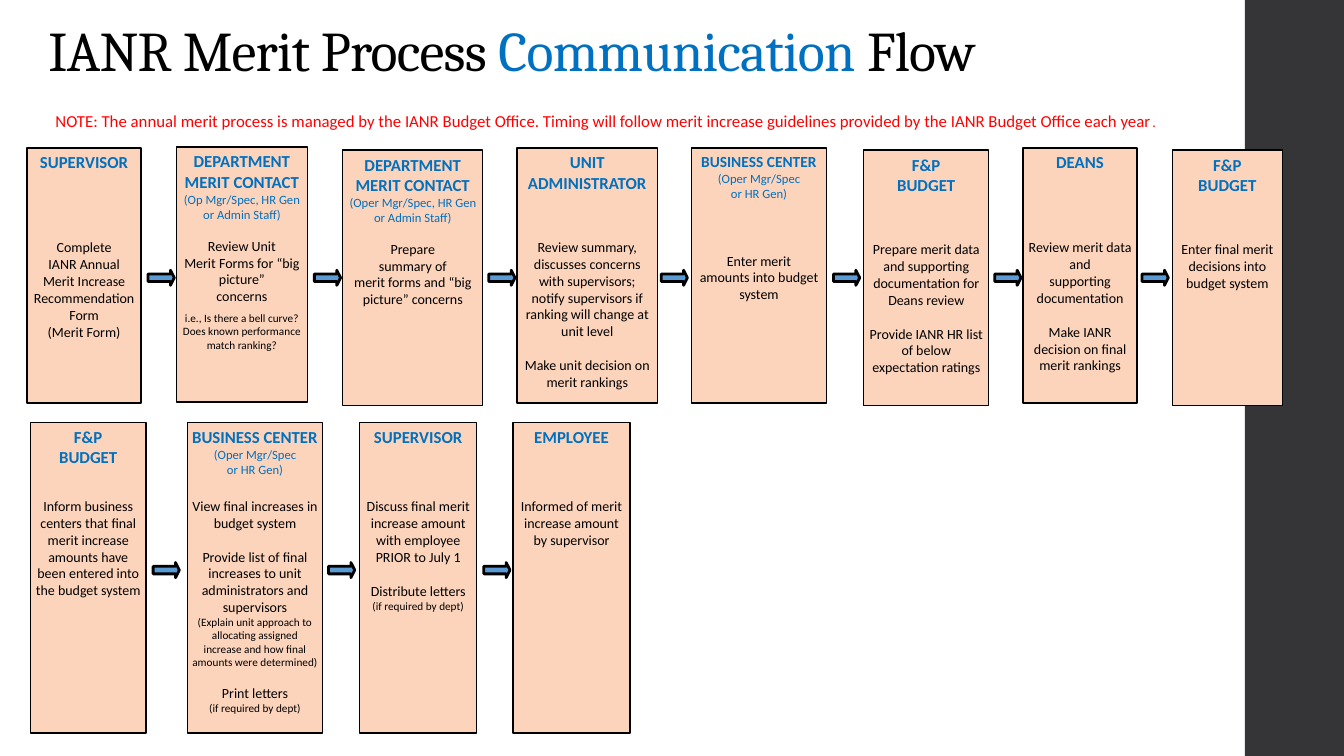
from dataclasses import dataclass
from typing import Optional

from pptx import Presentation
from pptx import util as u
from pptx.dml import color
from pptx.enum import shapes, text

BLACK, BLUE, RED = "000000", "0070C0", "FF0000"
PEACH, ARROW_BLUE, CHARCOAL = "FCD4BC", "5B9BD5", "353537"
INSET = 2.88
ARROW_WIDTH, ARROW_HEIGHT = 18.7, 10.8


@dataclass(frozen=True)
class Style:
    size: float
    colour: str
    bold: bool = False


ROLE = Style(12, BLUE, True)
SMALL_ROLE = Style(11, BLUE, True)
STAFF = Style(9, BLUE)
STEP = Style(10, BLACK)
REMARK = Style(8, BLACK)


@dataclass(frozen=True)
class Line:
    """One paragraph; gap is the space before it, staff a lighter ending."""
    text: str
    style: Style = STEP
    gap: float = 0
    staff: str = ""


@dataclass
class Card:
    left: float
    top: float
    width: float
    lines: list[Line]
    arrow_left: Optional[float] = None


@dataclass
class Row:
    height: float
    arrow_top: float
    cards: list[Card]


BUDGET = [Line("F&P", ROLE), Line("BUDGET", ROLE)]
OPERATIONS = "(Oper Mgr/Spec"
HR = Line("or HR Gen)", STAFF)

ROWS = [
    Row(182.2, 193, [
        Card(19.4, 105.8, 81.4, [
            Line("SUPERVISOR", ROLE),
            Line("Complete", gap=47.6),
            Line("IANR Annual Merit Increase"),
            Line("Recommendation Form"),
            Line("(Merit Form)")], 105.8),
        Card(126, 105.1, 93.6, [
            Line("DEPARTMENT MERIT CONTACT", ROLE),
            Line("(Op Mgr/Spec, HR Gen or Admin Staff)", STAFF),
            Line("Review Unit", gap=11),
            Line("Merit Forms for “big picture”"),
            Line("concerns"),
            Line("i.e., Is there a bell curve? Does known performance match ranking?",
                 REMARK, 4.9)], 224.6),
        Card(244.8, 107.3, 100.1, [
            Line("DEPARTMENT MERIT CONTACT", ROLE),
            Line("(Oper Mgr/Spec, HR Gen or Admin Staff)", STAFF),
            Line("Prepare", gap=11),
            Line("summary of"),
            Line("merit forms and “big picture” concerns")], 349.2),
        Card(369.4, 105.8, 100.1, [
            Line("UNIT", ROLE),
            Line("ADMINISTRATOR", ROLE),
            Line("Review summary,", gap=33),
            Line("discusses concerns with supervisors; notify supervisors if "
                 "ranking will change at unit level"),
            Line("Make unit decision on merit rankings", gap=12.2)], 472.3),
        Card(493.9, 105.8, 96.5, [
            Line("BUSINESS CENTER ", SMALL_ROLE, staff=OPERATIONS),
            HR,
            Line("Enter merit", gap=36.6),
            Line("amounts into budget system")], 595.4),
        Card(617, 107.3, 89.3, BUDGET + [
            Line("Prepare merit data and supporting", gap=33),
            Line("documentation for Deans review"),
            Line("Provide IANR HR list of below expectation ratings", gap=12.2)], 710.6),
        Card(730.8, 105.8, 81.4, [
            Line("DEANS", ROLE),
            Line("Review merit data and", gap=47.6),
            Line("supporting documentation"),
            Line("Make IANR decision on final merit rankings", gap=12.2)], 815.8),
        Card(837.4, 107.3, 78.5, BUDGET + [
            Line("Enter final merit decisions into budget system", gap=33)]),
    ]),
    Row(221.8, 401.8, [
        Card(21.6, 301.7, 82.8, BUDGET + [
            Line("Inform business centers that final merit increase amounts have "
                 "been entered into the budget system", gap=22)], 109.4),
        Card(133.9, 301.7, 96.5, [
            Line("BUSINESS CENTER ", ROLE, staff=OPERATIONS),
            HR,
            Line("View final increases in budget system", gap=14.6),
            Line("Provide list of final", gap=12.2),
            Line("increases to unit"),
            Line("administrators and"),
            Line("supervisors"),
            Line("(Explain unit approach to allocating assigned", REMARK),
            Line("increase and how final amounts were determined)", REMARK),
            Line("Print letters", gap=11),
            Line("(if required by dept)", REMARK)], 234.7),
        Card(257, 301.7, 83.5, [
            Line("SUPERVISOR", ROLE),
            Line("Discuss final merit increase amount", gap=36.6),
            Line("with employee"),
            Line("PRIOR to July 1"),
            Line("Distribute letters", gap=12.2),
            Line("(if required by dept)", REMARK)], 345.6),
        Card(366.5, 301.7, 83.5, [
            Line("EMPLOYEE", ROLE),
            Line("Informed of merit increase amount by supervisor", gap=36.6)]),
    ]),
]


def rgb(value: str) -> color.RGBColor:
    return color.RGBColor.from_string(value)


def format_span(span, style: Style, font: str = "Calibri") -> None:
    span.font.name = font
    span.font.size = u.Pt(style.size)
    span.font.bold = style.bold
    span.font.color.rgb = rgb(style.colour)


def set_insets(frame, inset: float) -> None:
    frame.margin_left = frame.margin_right = u.Pt(inset)
    frame.margin_top = frame.margin_bottom = u.Pt(inset)
    frame.word_wrap = True


def add_block(slide, kind, left: float, top: float, width: float, height: float,
              fill: str, line_width: float = 0):
    """Add a filled shape, with a black outline if line_width is given."""
    block = slide.shapes.add_shape(kind, u.Pt(left), u.Pt(top), u.Pt(width), u.Pt(height))
    block.shadow.inherit = False
    block.fill.solid()
    block.fill.fore_color.rgb = rgb(fill)
    if line_width:
        block.line.color.rgb = rgb(BLACK)
        block.line.width = u.Pt(line_width)
    else:
        block.line.fill.background()
    return block


def add_card(slide, card: Card, height: float) -> None:
    box = add_block(slide, shapes.MSO_SHAPE.RECTANGLE, card.left, card.top,
                    card.width, height, PEACH, 1)
    frame = box.text_frame
    set_insets(frame, INSET)
    frame.vertical_anchor = text.MSO_ANCHOR.TOP
    frame.text = "\n".join(line.text for line in card.lines)
    for para, line in zip(frame.paragraphs, card.lines):
        para.alignment = text.PP_ALIGN.CENTER
        para.space_before = u.Pt(line.gap)
        format_span(para.runs[0], line.style)
        if line.staff:
            span = para.add_run()
            span.text = line.staff
            format_span(span, STAFF)


def add_arrow(slide, left: float, top: float) -> None:
    arrow = add_block(slide, shapes.MSO_SHAPE.RIGHT_ARROW, left, top,
                      ARROW_WIDTH, ARROW_HEIGHT, ARROW_BLUE, 2)
    arrow.adjustments[0] = 0.5
    arrow.adjustments[1] = 0.25


def add_spans(slide, left: float, top: float, width: float, height: float,
              spans: list[tuple[str, Style]], font: str):
    """Add a one-paragraph text box made of differently styled spans."""
    box = slide.shapes.add_textbox(u.Pt(left), u.Pt(top), u.Pt(width), u.Pt(height))
    box.text_frame.word_wrap = True
    para = box.text_frame.paragraphs[0]
    for words, style in spans:
        span = para.add_run()
        span.text = words
        format_span(span, style, font)
    return box.text_frame


def main() -> None:
    deck = Presentation()
    deck.slide_width, deck.slide_height = u.Pt(960), u.Pt(540)
    slide = deck.slides.add_slide(deck.slide_layouts[6])
    add_block(slide, shapes.MSO_SHAPE.RECTANGLE, 889.2, 0, 70.8, 540, CHARCOAL)

    title = add_spans(slide, 27.4, 16.6, 853.2, 46.8, [
        ("IANR Merit Process ", Style(40, BLACK)),
        ("Communication", Style(40, BLUE)),
        (" Flow", Style(40, BLACK))], "Cambria")
    title.vertical_anchor = text.MSO_ANCHOR.BOTTOM
    title.paragraphs[0].line_spacing = 0.9
    for span in title.paragraphs[0].runs:
        span.font._element.set("spc", "-50")

    note = add_spans(slide, 36.7, 76.3, 879.8, 19.4, [
        ("NOTE: The annual merit process is managed by the IANR Budget Office. "
         "Timing will follow merit increase guidelines provided by the IANR "
         "Budget Office each year", Style(12, RED)),
        (".", Style(10, RED))], "Calibri")
    set_insets(note, INSET)
    for row in ROWS:
        for card in row.cards:
            add_card(slide, card, row.height)
            if card.arrow_left is not None:
                add_arrow(slide, card.arrow_left, row.arrow_top)
    deck.save("out.pptx")


if __name__ == "__main__":
    main()
